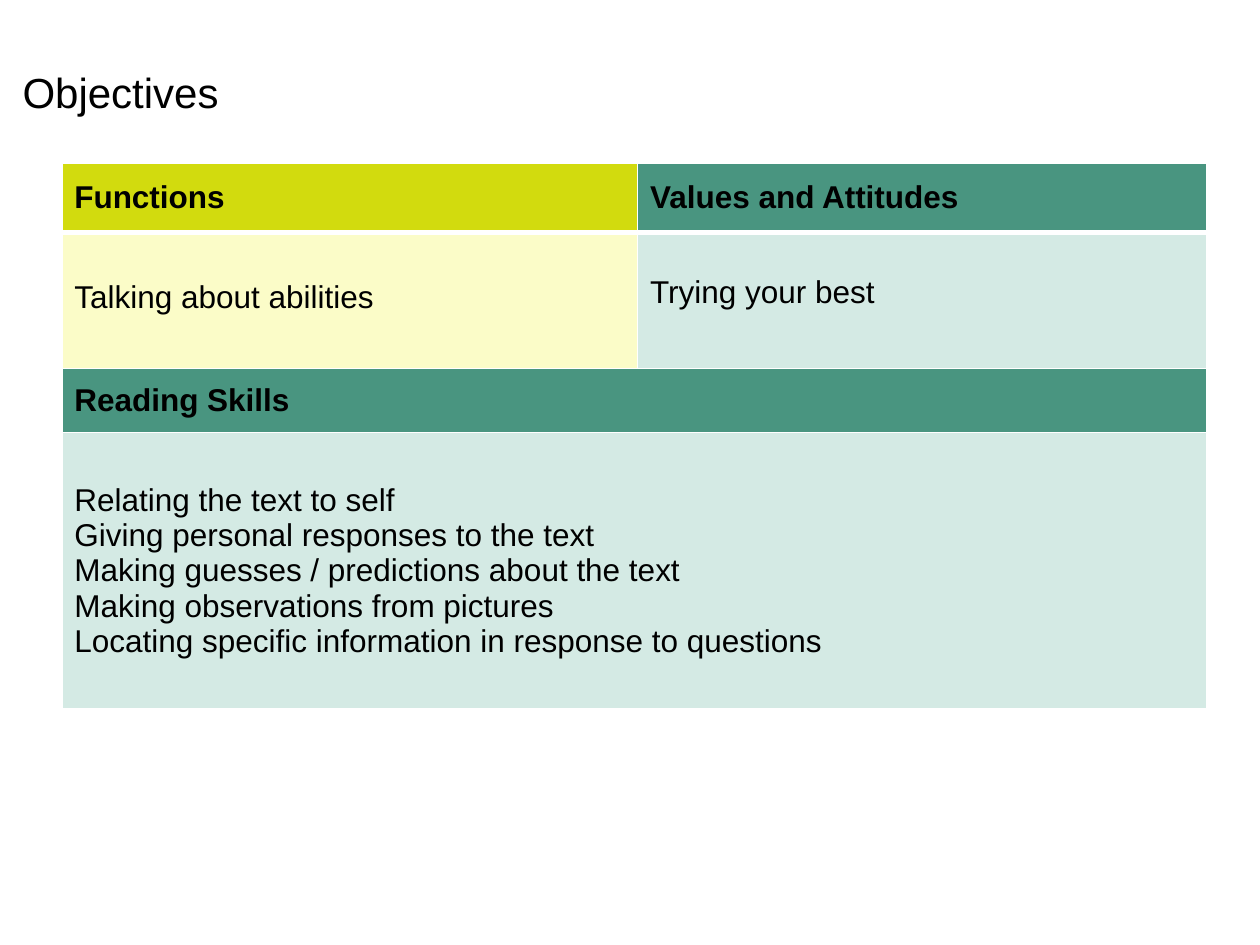
"""Build the Objectives slide with its table of functions, values and skills."""
from lxml import etree
from pptx import Presentation
from pptx.dml.color import RGBColor
from pptx.enum.text import MSO_ANCHOR
from pptx.oxml.ns import qn
from pptx.util import Pt

TOP, MIDDLE = MSO_ANCHOR.TOP, MSO_ANCHOR.MIDDLE
FONT = "Arial"
COLORS = {
    "text": "000000",
    "border": "FFFFFF",
    "lime": "D2DB0E",
    "pale_lime": "FBFCC8",
    "green": "499580",
    "pale_green": "D4EAE4",
}


def style_text(frame, size, bold=False):
    for paragraph in frame.paragraphs:
        paragraph.font.name = FONT
        paragraph.font.size = Pt(size)
        paragraph.font.bold = bold
        paragraph.font.color.rgb = RGBColor.from_string(COLORS["text"])


def add_border(cell, side, width):
    line = etree.SubElement(cell._tc.get_or_add_tcPr(), qn(f"a:ln{side}"), w=str(Pt(width)))
    fill = etree.SubElement(line, qn("a:solidFill"))
    etree.SubElement(fill, qn("a:srgbClr"), val=COLORS["border"])


prs = Presentation()
prs.slide_width, prs.slide_height = Pt(720), Pt(540)
slide = prs.slides.add_slide(prs.slide_layouts[6])

title = slide.shapes.add_textbox(Pt(5.8), Pt(34.6), Pt(127.4), Pt(36)).text_frame
title.text = "Objectives"
style_text(title, 24)

column_widths = [329, 325.4]
row_heights = [39.4, 77.8, 36.7, 158]
objectives = slide.shapes.add_table(
    4, 2, Pt(35.3), Pt(93.4), Pt(sum(column_widths)), Pt(sum(row_heights))
).table
objectives.first_row = False
objectives.horz_banding = False
for column, width in zip(objectives.columns, column_widths):
    column.width = Pt(width)
for row, height in zip(objectives.rows, row_heights):
    row.height = Pt(height)

reading_skills = (
    "Relating the text to self\vGiving personal responses to the text\v"
    "Making guesses / predictions about the text\n"
    "Making observations from pictures\n"
    "Locating specific information in response to questions"
)
contents = [
    (0, 0, "Functions", "lime", True, MIDDLE, 3.6),
    (0, 1, "Values and Attitudes", "green", True, MIDDLE, 3.6),
    (1, 0, "Talking about abilities", "pale_lime", False, TOP, 27.4),
    (1, 1, "Trying your best", "pale_green", False, TOP, 24.3),
    (2, 0, "Reading Skills", "green", True, MIDDLE, 3.6),
    (3, 0, reading_skills, "pale_green", False, MIDDLE, 3.6),
]
for row in (2, 3):
    objectives.cell(row, 0).merge(objectives.cell(row, 1))

for row, column, text, color, bold, anchor, margin_top in contents:
    cell = objectives.cell(row, column)
    cell.text = text
    style_text(cell.text_frame, 18, bold)
    cell.vertical_anchor = anchor
    cell.margin_top = Pt(margin_top)
    for side in "LRTB":
        below_header = (row, side) in ((0, "B"), (1, "T"))
        add_border(cell, side, 3 if below_header else 1)
    cell.fill.solid()
    cell.fill.fore_color.rgb = RGBColor.from_string(COLORS[color])

prs.save("out.pptx")
